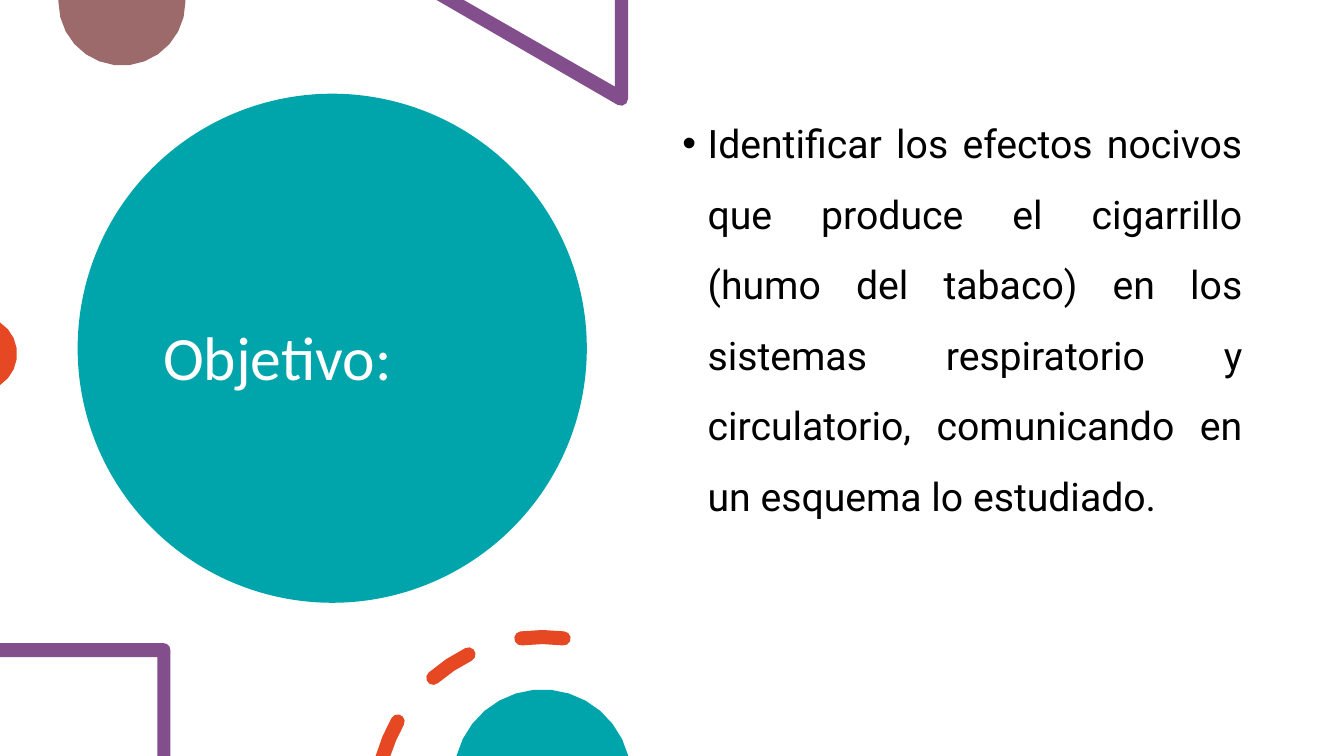
from math import ceil, cos, radians, sin, sqrt

from lxml.etree import SubElement
from pptx import Presentation
from pptx.dml.color import RGBColor
from pptx.enum.shapes import MSO_SHAPE
from pptx.enum.text import MSO_ANCHOR, PP_ALIGN
from pptx.oxml.ns import qn
from pptx.util import Inches, Pt

COLORS = {
    "teal": "00A5AB",
    "orange": "E64823",
    "purple": "824F8C",
    "brown": "9C6A6A",
    "white": "FFFFFF",
    "black": "000000",
}
WIDTH, HEIGHT = 13.33, 7.5


def rgb(name):
    return RGBColor.from_string(COLORS[name])


def paint(shape, color):
    shape.shadow.inherit = False
    shape.fill.solid()
    shape.fill.fore_color.rgb = rgb(color)
    shape.line.fill.background()


def add_preset(slide, preset, color, *box):
    paint(slide.shapes.add_shape(preset, *map(Inches, box)), color)


def arc(cx, cy, radius, start, end):
    """Arc points, as few as look round; degrees run counterclockwise."""
    sweep = radians(end - start)
    steps = max(1, ceil(abs(sweep) / sqrt(0.04 / radius)))
    angles = [radians(start) + sweep * i / steps for i in range(steps + 1)]
    return [(cx + radius * cos(a), cy - radius * sin(a)) for a in angles]


def add_outline(slide, color, *contours):
    """One filled freeform made of closed contours given in inches."""
    contours = [[(Inches(x), Inches(y)) for x, y in points] for points in contours]
    builder = slide.shapes.build_freeform(*contours[0][0])
    for index, points in enumerate(contours):
        if index:
            builder.move_to(*points[0])
        builder.add_line_segments(points[1:], close=True)
    paint(builder.convert_to_shape(), color)


def ring_dash(start, outer_end, inner_end, capped=True):
    """A thick dash of the ring, with round ends unless it runs off the slide."""
    cx, cy, radius, half = 5.38, 7.97, 1.65, 0.07

    def cap(angle, turn):
        x, y = arc(cx, cy, radius, angle, angle)[0]
        return arc(x, y, half, turn, turn + 180)[1:-1]

    points = arc(cx, cy, radius + half, start, outer_end)
    if capped:
        points += cap(outer_end, outer_end)
    points += arc(cx, cy, radius - half, inner_end, start)
    return points + cap(start, start + 180)


def add_text(slide, text, left, top, width, height, *, font, size, color,
             spacing, before=0, align=PP_ALIGN.LEFT, anchor=MSO_ANCHOR.TOP,
             bullet=None):
    frame = slide.shapes.add_textbox(
        Inches(left), Inches(top), Inches(width), Inches(height)).text_frame
    frame.word_wrap = True
    frame.vertical_anchor = anchor
    paragraph = frame.paragraphs[0]
    paragraph.alignment = align
    paragraph.line_spacing = spacing
    paragraph.space_before = Pt(before)
    run = paragraph.add_run()
    run.text = text
    run.font.name = font
    run.font.size = Pt(size)
    run.font.color.rgb = rgb(color)
    if bullet:
        properties = paragraph._p.get_or_add_pPr()
        properties.set("marL", str(Inches(0.25)))
        properties.set("indent", str(Inches(-0.25)))
        SubElement(properties, qn("a:buFont")).set("typeface", "Arial")
        SubElement(properties, qn("a:buChar")).set("char", bullet)


def main():
    prs = Presentation()
    prs.slide_width, prs.slide_height = Inches(WIDTH), Inches(HEIGHT)
    slide = prs.slides.add_slide(prs.slide_layouts[6])

    # Backdrop and title disc
    add_preset(slide, MSO_SHAPE.RECTANGLE, "white", 0, 0, WIDTH, HEIGHT)
    add_preset(slide, MSO_SHAPE.OVAL, "teal", 0.77, 0.93, 5.05, 5.05)
    add_text(slide, "Objetivo:", 1.52, 1.35, 3.54, 4.45, font="Calibri", size=44,
             color="white", spacing=0.9, anchor=MSO_ANCHOR.MIDDLE)

    # Brown circle, triangle corner and orange circle
    add_outline(slide, "brown", [(0.58, 0), *arc(1.21, 0.02, 0.63, 180, 360), (1.84, 0)])
    add_outline(slide, "purple", [(6.23, 0), (6.1, 0), (6.1, 0.86), (4.6, 0), (4.33, 0),
                                  *arc(6.16, 0.98, 0.07, -120, 0)])
    add_outline(slide, "orange", arc(-0.2, 3.51, 0.37, -57, 57))

    # Objective
    add_text(slide,
             "Identificar los efectos nocivos que produce el cigarrillo (humo del "
             "tabaco) en los sistemas respiratorio y circulatorio, comunicando en "
             "un esquema lo estudiado.",
             6.67, 0.9, 5.75, 5.35, font="Roboto", size=28, color="black",
             spacing=1.5, before=10, align=PP_ALIGN.JUSTIFY, bullet="•")

    # Square corner
    add_outline(slide, "purple", [(1.69, 7.5), (1.56, 7.5), (1.56, 6.52), (0, 6.52),
                                  (0, 6.38), *arc(1.62, 6.45, 0.07, 90, 0)])

    # Dashed ring around the lower circle
    add_outline(slide, "orange", ring_dash(82.7, 97.3, 97.3), ring_dash(116.4, 131, 131),
                ring_dash(150.5, 164.1, 162.7, capped=False))
    add_outline(slide, "teal", arc(5.38, 7.72, 0.88, 14.5, 165.5))

    prs.save("out.pptx")


if __name__ == "__main__":
    main()
